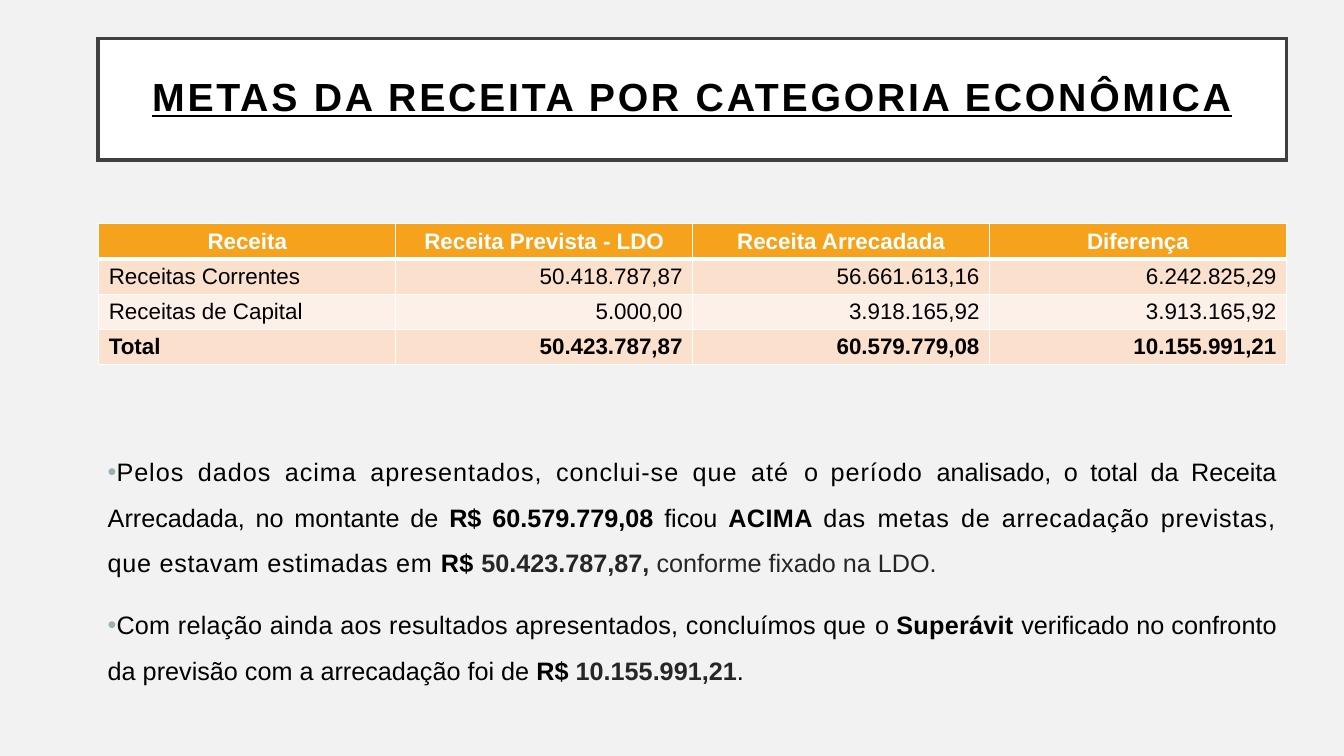
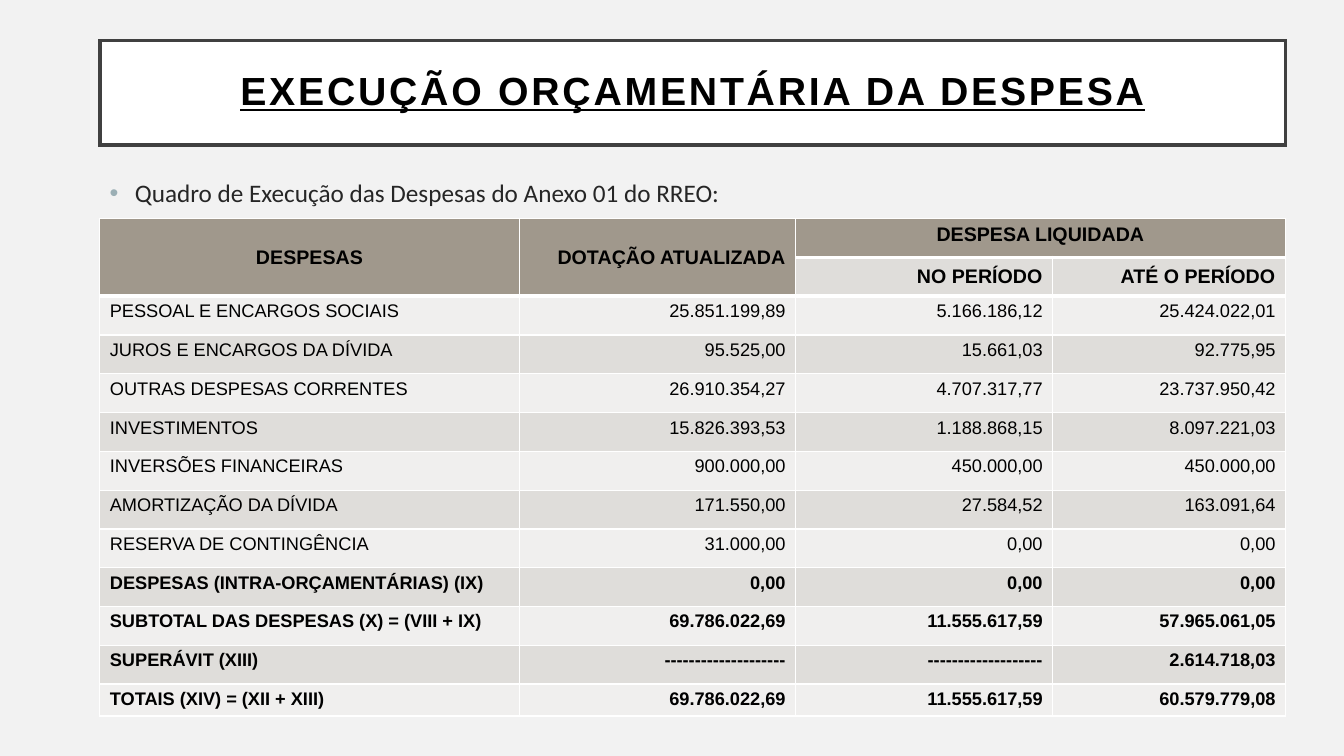
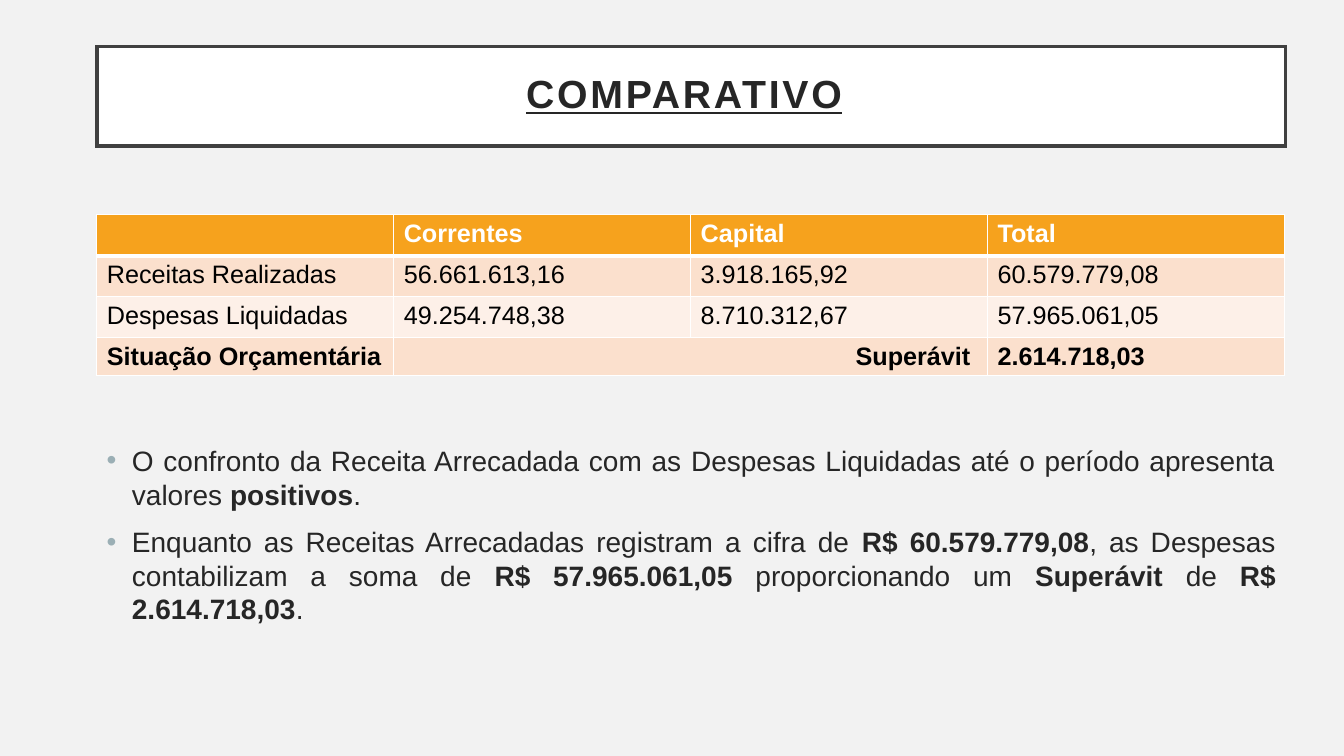
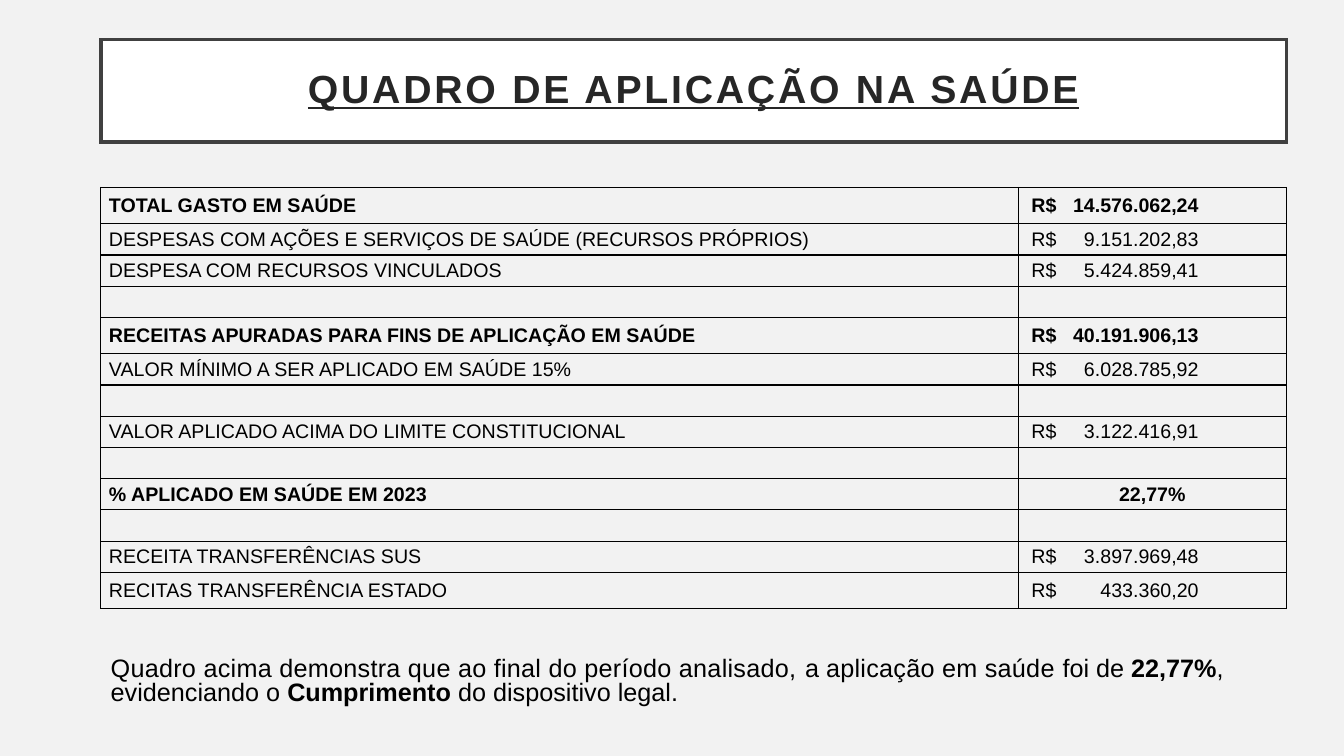
"""Builds four slides on budget revenue, spending and health figures."""
from dataclasses import dataclass

import pptx
import pptx.dml.color
import pptx.enum.text
import pptx.oxml.ns
import pptx.util
from lxml import etree

Inches = pptx.util.Inches
Pt = pptx.util.Pt
Align = pptx.enum.text.PP_ALIGN
Anchor = pptx.enum.text.MSO_ANCHOR
LEFT, CENTER, RIGHT = Align.LEFT, Align.CENTER, Align.RIGHT


@dataclass(frozen=True)
class Theme:
    """Colours, fonts and type sizes of the deck."""
    background: str = "F2F2F2"
    white: str = "FFFFFF"
    black: str = "000000"
    ink: str = "262626"
    frame: str = "404040"
    bullet: str = "9BAFB5"
    orange: str = "F6A21D"
    peach: tuple = ("FBE0CD", "FDF0E8")
    taupe: str = "A0988C"
    stone: tuple = ("F0EFEE", "DFDDDA")
    font: str = "Arial"
    lead_font: str = "Calibri"
    title_size: float = 28
    large_size: float = 20
    body_size: float = 18
    table_size: float = 16
    label_size: float = 14
    dense_size: float = 13


THEME = Theme()


@dataclass(frozen=True)
class Span:
    """A stretch of text with one look."""
    text: str
    bold: bool = False
    spacing: float = 0
    color: str = THEME.black


@dataclass(frozen=True)
class GridStyle:
    """The look of a table."""
    size: float
    header_size: float = THEME.table_size
    header_rows: int = 1
    header_fill: str = THEME.orange
    header_color: str = THEME.white
    bands: tuple = THEME.peach
    border: str = THEME.white
    header_anchor: Anchor = Anchor.MIDDLE
    anchor: Anchor = Anchor.MIDDLE
    margins: tuple = (0.1, 0.05)
    tab: float = 0


def rgb(color):
    return pptx.dml.color.RGBColor.from_string(color)


def add_element(parent, tag, **attributes):
    return etree.SubElement(parent, pptx.oxml.ns.qn(tag), attributes)


def format_run(run, size, color, bold=False, spacing=0, font=THEME.font):
    run.font.name = font
    run.font.size = Pt(size)
    run.font.bold = bold
    run.font.color.rgb = rgb(color)
    if spacing:
        run.font._element.set("spc", str(round(spacing * 100)))


def add_titled_slide(deck, title, at, color):
    """Adds a slide with a framed, underlined title."""
    slide = deck.slides.add_slide(deck.slide_layouts[5])
    box = slide.shapes.title
    box.left, box.top, box.width, box.height = map(Inches, at)
    box.fill.solid()
    box.fill.fore_color.rgb = rgb(THEME.white)
    box.line.color.rgb = rgb(THEME.frame)
    box.line.width = Pt(2.5)
    add_element(box.line._get_or_add_ln(), "a:miter", lim="800000")
    frame = box.text_frame
    frame.text = title
    frame.word_wrap = True
    frame.auto_size = pptx.enum.text.MSO_AUTO_SIZE.NONE
    frame.vertical_anchor = Anchor.MIDDLE
    frame.margin_left = frame.margin_right = Inches(0.2)
    frame.margin_top = frame.margin_bottom = Inches(0.2)
    para = frame.paragraphs[0]
    para.alignment = CENTER
    para.line_spacing = 0.9
    run = para.runs[0]
    format_run(run, THEME.title_size, color, bold=True, spacing=2)
    run.font.underline = True
    return slide


def add_bullet(para, indent):
    properties = para._p.get_or_add_pPr()
    properties.set("marL", str(Inches(indent)))
    properties.set("indent", str(-Inches(0.25)))
    color = add_element(properties, "a:buClr")
    add_element(color, "a:srgbClr", val=THEME.bullet)
    add_element(properties, "a:buFont", typeface=THEME.font)
    add_element(properties, "a:buChar", char="•")


def add_text(slide, at, paragraphs, size, font=THEME.font, align=LEFT,
             line_spacing=None, before=0, after=0, indent=None):
    """Adds paragraphs of spans, bulleted when an indent is given."""
    frame = slide.shapes.add_textbox(*map(Inches, at)).text_frame
    frame.word_wrap = True
    for index, spans in enumerate(paragraphs):
        para = frame.add_paragraph() if index else frame.paragraphs[0]
        para.alignment = align
        para.line_spacing = line_spacing
        para.space_before, para.space_after = Pt(before), Pt(after)
        if indent is not None:
            add_bullet(para, indent)
        for span in spans:
            run = para.add_run()
            run.text = span.text
            format_run(run, size, span.color, span.bold, span.spacing, font)


def set_borders(cell, color, bottom=1):
    properties = cell._tc.get_or_add_tcPr()
    widths = {"a:lnL": 1, "a:lnR": 1, "a:lnT": 1, "a:lnB": bottom}
    for position, (tag, width) in enumerate(widths.items()):
        line = etree.Element(pptx.oxml.ns.qn(tag), {"w": str(Pt(width))})
        fill = add_element(line, "a:solidFill")
        add_element(fill, "a:srgbClr", val=color)
        properties.insert(position, line)


def fill_cell(cell, color):
    if color:
        cell.fill.solid()
        cell.fill.fore_color.rgb = rgb(color)
    else:
        cell.fill.background()


def write_cell(cell, text, align, size, color, bold, style):
    side, edge = style.margins
    cell.margin_left = cell.margin_right = Inches(side)
    cell.margin_top = cell.margin_bottom = Inches(edge)
    para = cell.text_frame.paragraphs[0]
    para.text = text
    para.alignment = align
    para._p.get_or_add_endParaRPr().set("sz", str(size * 100))
    if "\t" in text:
        cell.margin_left = Inches(side + 0.05)
        tabs = add_element(para._p.get_or_add_pPr(), "a:tabLst")
        add_element(tabs, "a:tab", pos=str(Inches(style.tab)), algn="r")
    for run in para.runs:
        format_run(run, size, color, bold)


def add_grid(slide, at, widths, heights, rows, style, aligns,
             header_aligns=None, bold_rows=(), merges=()):
    """Adds a table with header rows, banding and merged ranges."""
    left, top = at
    shape = slide.shapes.add_table(
        len(rows), len(widths), Inches(left), Inches(top),
        Inches(sum(widths)), Inches(sum(heights)))
    table = shape.table
    table.first_row = table.horz_banding = False
    for column, width in zip(table.columns, widths):
        column.width = Inches(width)
    for row, height in zip(table.rows, heights):
        row.height = Inches(height)
    for row, texts in enumerate(rows):
        header = row < style.header_rows
        size = style.header_size if header else style.size
        color = style.header_color if header else THEME.black
        row_aligns = header_aligns if header else aligns
        band = style.bands[(row - style.header_rows) % len(style.bands)]
        for column, text in enumerate(texts):
            cell = table.cell(row, column)
            write_cell(cell, text, row_aligns[column], size, color,
                       header or row in bold_rows, style)
            cell.vertical_anchor = (
                style.header_anchor if header else style.anchor)
            fill_cell(cell, style.header_fill if header else band)
            set_borders(cell, style.border, 3 if header else 1)
    for first, last in merges:
        table.cell(*first).merge(table.cell(*last))
    return table


def add_revenue_slide(deck):
    slide = add_titled_slide(deck, "METAS DA RECEITA POR CATEGORIA ECONÔMICA",
                             (0.97, 0.38, 11.79, 1.21), THEME.black)
    rows = [
        ("Receita", "Receita Prevista - LDO", "Receita Arrecadada", "Diferença"),
        ("Receitas Correntes", "50.418.787,87", "56.661.613,16", "6.242.825,29"),
        ("Receitas de Capital", "5.000,00", "3.918.165,92", "3.913.165,92"),
        ("Total", "50.423.787,87", "60.579.779,08", "10.155.991,21"),
    ]
    add_grid(slide, (0.98, 2.22), [11.78 / 4] * 4, [0.35] * 4, rows,
             GridStyle(THEME.table_size), [LEFT] + [RIGHT] * 3,
             [CENTER] * 4, bold_rows={3})
    paragraphs = [
        [Span("Pelos dados acima apresentados, conclui-se que até ", spacing=0.7),
         Span("o "), Span("período ", spacing=0.7),
         Span("analisado, o total da Receita Arrecadada, no montante de "),
         Span("R$ 60.579.779,08 ", True), Span("ficou "),
         Span("ACIMA ", True, 0.3),
         Span("das metas de arrecadação previstas, que estavam estimadas em ",
              spacing=0.5),
         Span("R$ ", True, 0.3), Span("50.423.787,87, ", True, color=THEME.ink),
         Span("conforme fixado na LDO.", color=THEME.ink)],
        [Span("Com relação ainda aos resultados apresentados, concluímos que ",
              spacing=0.2),
         Span("o "), Span("Superávit ", True, 0.2),
         Span("verificado no confronto da previsão com a arrecadação foi de "),
         Span("R$ ", True), Span("10.155.991,21", True, color=THEME.ink),
         Span(".")],
    ]
    add_text(slide, (0.97, 4.33, 11.79, 2.79), paragraphs, THEME.body_size,
             align=Align.JUSTIFY, line_spacing=1.5, before=6, after=6, indent=0)


def add_spending_slide(deck):
    slide = add_titled_slide(deck, "EXECUÇÃO ORÇAMENTÁRIA DA DESPESA",
                             (0.99, 0.4, 11.76, 1.04), THEME.black)
    lead = Span("Quadro de Execução das Despesas do Anexo 01 do RREO:",
                color=THEME.ink)
    add_text(slide, (0.99, 1.71, 11.76, 0.46), [[lead]], THEME.body_size,
             font=THEME.lead_font, before=10, indent=0.25)
    rows = [
        ("DESPESAS", "DOTAÇÃO ATUALIZADA", "DESPESA LIQUIDADA", ""),
        ("", "", "NO PERÍODO", "ATÉ O PERÍODO"),
        ("PESSOAL E ENCARGOS SOCIAIS", "25.851.199,89", "5.166.186,12", "25.424.022,01"),
        ("JUROS E ENCARGOS DA DÍVIDA", "95.525,00", "15.661,03", "92.775,95"),
        ("OUTRAS DESPESAS CORRENTES", "26.910.354,27", "4.707.317,77", "23.737.950,42"),
        ("INVESTIMENTOS", "15.826.393,53", "1.188.868,15", "8.097.221,03"),
        ("INVERSÕES FINANCEIRAS", "900.000,00", "450.000,00", "450.000,00"),
        ("AMORTIZAÇÃO DA DÍVIDA", "171.550,00", "27.584,52", "163.091,64"),
        ("RESERVA DE CONTINGÊNCIA", "31.000,00", "0,00", "0,00"),
        ("DESPESAS (INTRA-ORÇAMENTÁRIAS) (IX)", "0,00", "0,00", "0,00"),
        ("SUBTOTAL DAS DESPESAS (X) = (VIII + IX)", "69.786.022,69", "11.555.617,59",
         "57.965.061,05"),
        ("SUPERÁVIT (XIII)", "--------------------", "-------------------",
         "2.614.718,03"),
        ("TOTAIS (XIV) = (XII + XIII)", "69.786.022,69", "11.555.617,59",
         "60.579.779,08"),
    ]
    style = GridStyle(THEME.dense_size, header_size=THEME.label_size,
                      header_rows=2, header_fill=THEME.taupe,
                      header_color=THEME.black, bands=THEME.stone,
                      anchor=Anchor.TOP)
    table = add_grid(slide, (0.99, 2.17), [4.16, 2.74, 2.55, 2.31],
                     [4.62 / 12] * 12 + [0.3], rows, style,
                     [LEFT] + [RIGHT] * 3, [CENTER, RIGHT, RIGHT, RIGHT],
                     bold_rows=range(9, 13),
                     merges=[((0, 0), (1, 0)), ((0, 1), (1, 1)),
                             ((0, 2), (0, 3))])
    spanning = table.cell(0, 2)
    spanning.text_frame.paragraphs[0].alignment = CENTER
    spanning.vertical_anchor = Anchor.TOP
    for column in (2, 3):
        fill_cell(table.cell(1, column), THEME.stone[1])


def add_comparison_slide(deck):
    slide = add_titled_slide(deck, "COMPARATIVO",
                             (0.96, 0.46, 11.79, 0.99), THEME.ink)
    slide.shapes.title.text_frame.margin_right = Inches(0.34)
    rows = [
        ("", "Correntes", "Capital", "Total"),
        ("Receitas Realizadas", "56.661.613,16", "3.918.165,92", "60.579.779,08"),
        ("Despesas Liquidadas", "49.254.748,38", "8.710.312,67", "57.965.061,05"),
        ("Situação Orçamentária", "Superávit", "", "2.614.718,03"),
    ]
    style = GridStyle(THEME.body_size, header_size=THEME.body_size,
                      header_anchor=Anchor.TOP, anchor=Anchor.TOP)
    table = add_grid(slide, (0.96, 2.13), [11.78 / 4] * 4,
                     [1.22 / 3] * 3 + [0.38],
                     rows, style, [LEFT] * 4, [LEFT] * 4, bold_rows={3},
                     merges=[((3, 1), (3, 2))])
    outcome = table.cell(3, 1)
    outcome.text_frame.paragraphs[0].alignment = RIGHT
    outcome.margin_right = Inches(0.17)

    def plain(text):
        return Span(text, color=THEME.ink)

    def strong(text):
        return Span(text, True, color=THEME.ink)

    paragraphs = [
        [plain("O confronto da Receita Arrecadada com as Despesas Liquidadas "
               "até o período apresenta valores "),
         strong("positivos"), plain(".")],
        [plain("Enquanto as Receitas Arrecadadas registram a cifra de "),
         strong("R$ 60.579.779,08"),
         plain(", as Despesas contabilizam a soma de "),
         strong("R$ 57.965.061,05 "), plain("proporcionando um "),
         strong("Superávit "), plain("de "), strong("R$ 2.614.718,03"),
         plain(".")],
    ]
    add_text(slide, (0.96, 4.35, 11.79, 2.45), paragraphs, THEME.large_size,
             align=Align.JUSTIFY, before=10, indent=0.25)


def add_health_slide(deck):
    slide = add_titled_slide(deck, "QUADRO DE APLICAÇÃO NA SAÚDE",
                             (1, 0.39, 11.76, 1.02), THEME.ink)
    blank = ("", "")
    rows = [
        ("TOTAL GASTO EM SAÚDE", "R$\t14.576.062,24"),
        ("DESPESAS COM AÇÕES E SERVIÇOS DE SAÚDE (RECURSOS PRÓPRIOS)",
         "R$\t9.151.202,83"),
        ("DESPESA COM RECURSOS VINCULADOS", "R$\t5.424.859,41"),
        blank,
        ("RECEITAS APURADAS PARA FINS DE APLICAÇÃO EM SAÚDE", "R$\t40.191.906,13"),
        ("VALOR MÍNIMO A SER APLICADO EM SAÚDE 15%", "R$\t6.028.785,92"),
        blank,
        ("VALOR APLICADO ACIMA DO LIMITE CONSTITUCIONAL", "R$\t3.122.416,91"),
        blank,
        ("% APLICADO EM SAÚDE EM 2023", "22,77%"),
        blank,
        ("RECEITA TRANSFERÊNCIAS SUS", "R$\t3.897.969,48"),
        ("RECITAS TRANSFERÊNCIA ESTADO", "R$\t433.360,20"),
    ]
    heights = [0.36 if row in (0, 4, 12) else 0.31 for row in range(len(rows))]
    style = GridStyle(THEME.label_size, header_rows=0, bands=(None,),
                      border=THEME.black, margins=(0.08, 0.03), tab=1.66)
    table = add_grid(slide, (1, 1.86), [9.1, 2.66], heights, rows, style,
                     [LEFT, LEFT], bold_rows={0, 4, 9})
    table.cell(9, 1).text_frame.paragraphs[0].alignment = CENTER
    spans = [
        Span("Quadro acima demonstra que ao final do período analisado, ",
             spacing=0.2),
        Span("a "), Span("aplicação em saúde ", spacing=0.2), Span("foi de "),
        Span("22,77%", True), Span(", evidenciando o "),
        Span("Cumprimento ", True), Span("do dispositivo legal."),
    ]
    add_text(slide, (1, 6.49, 11.76, 0.58), [spans], THEME.body_size,
             line_spacing=Pt(16.8))


def main():
    deck = pptx.Presentation()
    deck.slide_width, deck.slide_height = Inches(13.33), Inches(7.5)
    background = deck.slide_master.background.fill
    background.solid()
    background.fore_color.rgb = rgb(THEME.background)
    add_revenue_slide(deck)
    add_spending_slide(deck)
    add_comparison_slide(deck)
    add_health_slide(deck)
    deck.save("out.pptx")


if __name__ == "__main__":
    main()
